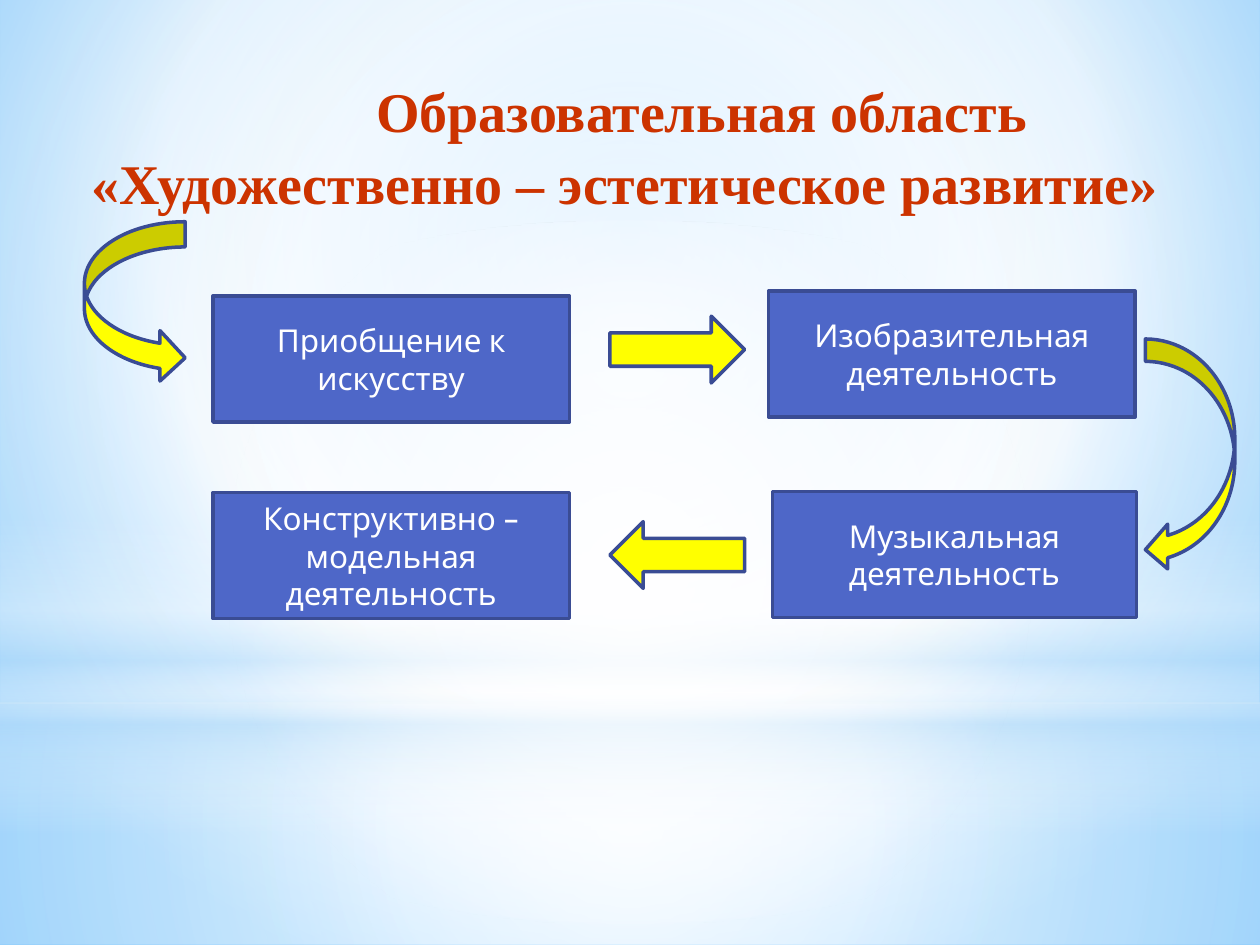
from lxml import etree
from pptx import Presentation
from pptx.dml.color import RGBColor
from pptx.enum import shapes, text
from pptx.oxml.ns import nsdecls, qn
from pptx.util import Inches, Pt

KIND = shapes.MSO_SHAPE
RED = RGBColor(0xCC, 0x33, 0x00)
BLUE = RGBColor(0x4E, 0x67, 0xC8)
NAVY = RGBColor(0x3A, 0x4C, 0x94)
YELLOW = RGBColor(0xFF, 0xFF, 0x00)
WHITE = RGBColor(0xFF, 0xFF, 0xFF)

# Heading line, left indent in inches
HEAD = [
    ("Образовательная область", 1.22),
    ("«Художественно – эстетическое развитие»", 0),
]
BOXES = [
    ("Приобщение к искусству", (1.69, 2.35, 2.83, 1)),
    ("Изобразительная деятельность", (6.1, 2.31, 2.91, 1)),
    ("Музыкальная деятельность", (6.13, 3.9, 2.89, 1)),
    ("Конструктивно – модельная деятельность", (1.69, 3.91, 2.83, 1)),
]
ARROWS = [
    (KIND.CURVED_RIGHT_ARROW, (0.67, 1.76, 0.8, 1.28)),
    (KIND.RIGHT_ARROW, (4.84, 2.51, 1.07, 0.53)),
    (KIND.CURVED_LEFT_ARROW, (9.09, 2.69, 0.71, 1.85)),
    (KIND.LEFT_ARROW, (4.84, 4.14, 1.07, 0.53)),
]

# Gradient stops: position, colour, opacity, all in percent
SKY = [(0, "9ED5FF", 100), (60, "FFFFFF", 100), (100, "5BB9FF", 100)]
MID = (50, 50, 50, 50)
LAYERS = [
    (KIND.RECTANGLE, (0, 5.58, 10, 1.92), MID,
     [(0, "FFFFFF", 91), (37, "FFFFFF", 76), (100, "B4DCFA", 79)]),
    (KIND.RECTANGLE, (0, 0, 10, 5.58), MID,
     [(0, "FFFFFF", 89), (48, "FFFFFF", 62), (100, "B4DCFA", 79)]),
    (KIND.RECTANGLE, (0, 4.12, 10, 2.5), None,
     [(0, "FFFFFF", 0), (29, "FFFFFF", 30), (45, "B4DCFA", 40),
      (55, "FFFFFF", 26), (65, "B4DCFA", 60), (100, "FFFFFF", 0)]),
    (KIND.OVAL, (0, 1.75, 10, 5.58), MID,
     [(0, "FFFFFF", 100), (56, "FFFFFF", 0)]),
]


def shade(root, stops, focus):
    """Swap the first empty fill under root for a circular or vertical gradient."""
    marks = "".join(
        f'<a:gs pos="{pos * 1000}"><a:srgbClr val="{tint}">'
        f'<a:alpha val="{alpha * 1000}"/></a:srgbClr></a:gs>'
        for pos, tint, alpha in stops)
    if focus:
        sides = " ".join(f'{side}="{part * 1000}"' for side, part in zip("ltrb", focus))
        way = f'<a:path path="circle"><a:fillToRect {sides}/></a:path>'
    else:
        way = '<a:lin ang="5400000" scaled="0"/>'
    grad = etree.fromstring(
        f'<a:gradFill {nsdecls("a")} rotWithShape="1"><a:gsLst>{marks}</a:gsLst>{way}</a:gradFill>')
    blank = next(root.iter(qn("a:noFill")))
    blank.getparent().replace(blank, grad)


def add(slide, kind, place):
    shape = slide.shapes.add_shape(kind, *map(Inches, place))
    shape.shadow.inherit = False
    return shape


def ink(shape, fill):
    shape.fill.solid()
    shape.fill.fore_color.rgb = fill
    shape.line.color.rgb = NAVY
    shape.line.width = Pt(2)


def write(para, words, face, size, tint, bold=False):
    para.alignment = text.PP_ALIGN.CENTER
    run = para.add_run()
    run.text = words
    run.font.name = face
    run.font.size = Pt(size)
    run.font.bold = bold
    run.font.color.rgb = tint


def backdrop(slide):
    slide.background.fill.background()
    shade(slide.element, SKY, (20, 10, 20, 60))
    for kind, place, focus, stops in LAYERS:
        layer = add(slide, kind, place)
        layer.line.fill.background()
        layer.fill.background()
        shade(layer.element, stops, focus)


def heading(slide):
    title = slide.shapes.title
    title.left, title.top, title.width, title.height = map(Inches, (0.43, 0.52, 9.06, 1.18))
    frame = title.text_frame
    frame.word_wrap = True
    frame.vertical_anchor = text.MSO_ANCHOR.TOP
    frame.auto_size = text.MSO_AUTO_SIZE.SHAPE_TO_FIT_TEXT
    for i, (words, indent) in enumerate(HEAD):
        para = frame.add_paragraph() if i else frame.paragraphs[0]
        para.line_spacing = 1.07
        para.space_before = Pt(0)
        write(para, words, "Times New Roman", 32, RED, True)
        para._p.get_or_add_pPr().set("marL", str(Inches(indent)))
    slide.shapes._spTree.append(title.element)  # in front of the backdrop


def main():
    deck = Presentation()
    deck.slide_width, deck.slide_height = Inches(10), Inches(7.5)
    slide = deck.slides.add_slide(deck.slide_layouts[5])
    backdrop(slide)
    heading(slide)
    for (kind, spot), (words, place) in zip(ARROWS, BOXES):
        ink(add(slide, kind, spot), YELLOW)
        box = add(slide, KIND.RECTANGLE, place)
        ink(box, BLUE)
        box.text_frame.word_wrap = True
        box.text_frame.vertical_anchor = text.MSO_ANCHOR.MIDDLE
        write(box.text_frame.paragraphs[0], words, "Cabin", 18, WHITE)
    deck.save("out.pptx")


if __name__ == "__main__":
    main()
